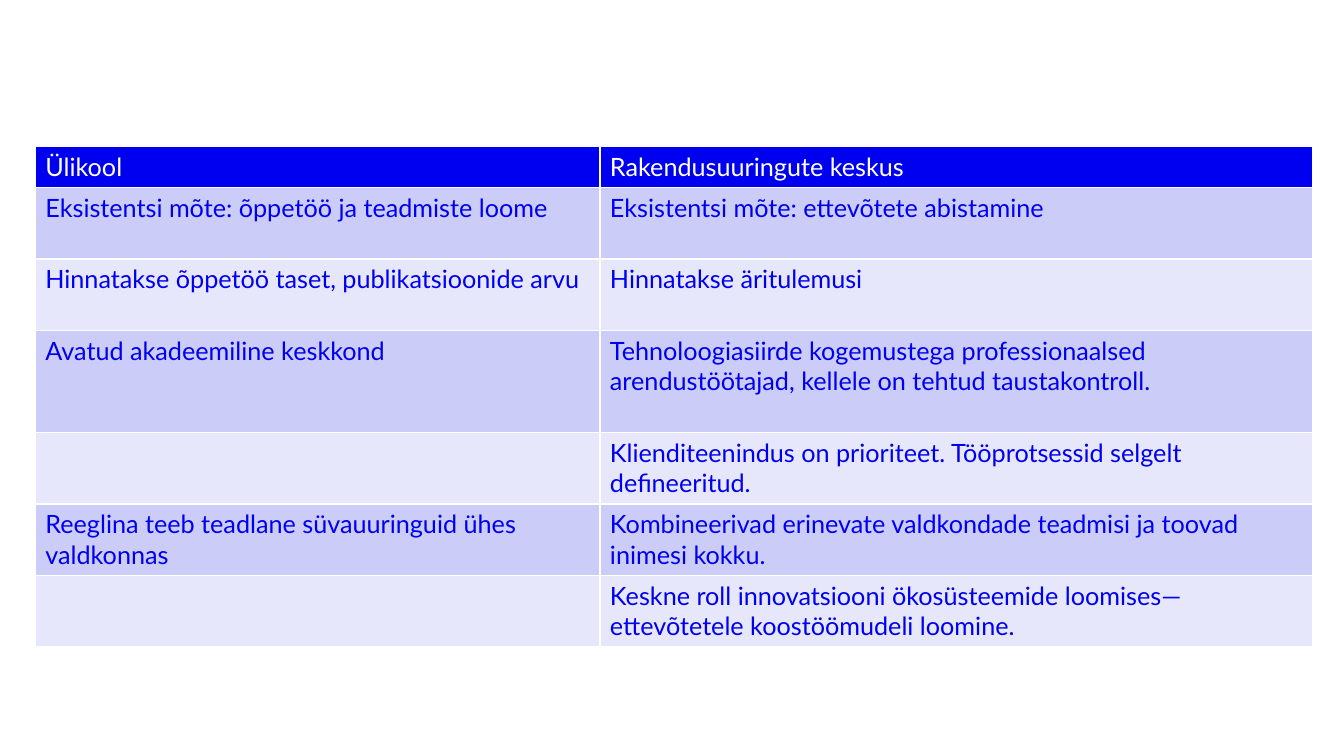
from dataclasses import dataclass

from lxml import etree
from pptx import Presentation
from pptx import util as u
from pptx.dml.color import RGBColor
from pptx.oxml.ns import qn

FONT, SIZE = "Lato", 18
BLUE, WHITE = "0000F0", "FFFFFF"
BANDS = ("CCCCF9", "E7E7FC")
LEFT, TOP = 0.35, 1.45
COLUMN_WIDTHS = (5.6, 7.07)
LINE_HEIGHT, ROW_PADDING = 0.3, 0.11


@dataclass
class Comparison:
    university: str
    centre: str
    lines: int = 2

    @property
    def height(self) -> float:
        return self.lines * LINE_HEIGHT + ROW_PADDING


ROWS = [
    Comparison("Ülikool", "Rakendusuuringute keskus", lines=1),
    Comparison("Eksistentsi mõte: õppetöö ja teadmiste loome",
               "Eksistentsi mõte: ettevõtete abistamine"),
    Comparison("Hinnatakse õppetöö taset, publikatsioonide arvu",
               "Hinnatakse äritulemusi"),
    Comparison("Avatud akadeemiline keskkond",
               "Tehnoloogiasiirde kogemustega professionaalsed arendustöötajad, "
               "kellele on tehtud taustakontroll.", lines=3),
    Comparison("", "Klienditeenindus on prioriteet. Tööprotsessid selgelt defineeritud."),
    Comparison("Reeglina teeb teadlane süvauuringuid ühes valdkonnas",
               "Kombineerivad erinevate valdkondade teadmisi ja toovad inimesi kokku."),
    Comparison("", "Keskne roll innovatsiooni ökosüsteemide loomises—"
                   "ettevõtetele koostöömudeli loomine."),
]


def rgb(value: str) -> RGBColor:
    return RGBColor.from_string(value)


def write(tf, content: str, *, color: str, size: float = SIZE, font: str = FONT) -> None:
    p = tf.paragraphs[0]
    p.font.size = u.Pt(size)
    if content:
        r = p.add_run()
        r.text = content
        r.font.name, r.font.size, r.font.bold = font, u.Pt(size), False
        r.font.color.rgb = rgb(color)


def add_borders(cell, color: str = WHITE, width: float = 1) -> None:
    tc_pr = cell._tc.get_or_add_tcPr()
    for side in "LRTB":
        line = etree.SubElement(tc_pr, qn(f"a:ln{side}"), w=str(u.Pt(width)))
        fill = etree.SubElement(line, qn("a:solidFill"))
        etree.SubElement(fill, qn("a:srgbClr"), val=color)


def format_cell(cell, content: str, fill: str, color: str) -> None:
    add_borders(cell)
    cell.fill.solid()
    cell.fill.fore_color.rgb = rgb(fill)
    write(cell.text_frame, content, color=color)


def add_comparison_table(s, rows: list[Comparison]) -> None:
    frame = s.shapes.add_table(
        len(rows), len(COLUMN_WIDTHS), u.Inches(LEFT), u.Inches(TOP),
        u.Inches(sum(COLUMN_WIDTHS)), u.Inches(sum(row.height for row in rows)))
    table = frame.table
    for column, width in zip(table.columns, COLUMN_WIDTHS):
        column.width = u.Inches(width)
    for i, row in enumerate(rows):
        table.rows[i].height = u.Inches(row.height)
        fill, color = (BANDS[(i - 1) % 2], BLUE) if i else (BLUE, WHITE)
        for j, content in enumerate((row.university, row.centre)):
            format_cell(table.cell(i, j), content, fill, color)


def main() -> None:
    prs = Presentation()
    prs.slide_width, prs.slide_height = u.Inches(13.33), u.Inches(7.5)
    s = prs.slides.add_slide(prs.slide_layouts[6])
    add_comparison_table(s, ROWS)
    prs.save("out.pptx")


if __name__ == "__main__":
    main()
